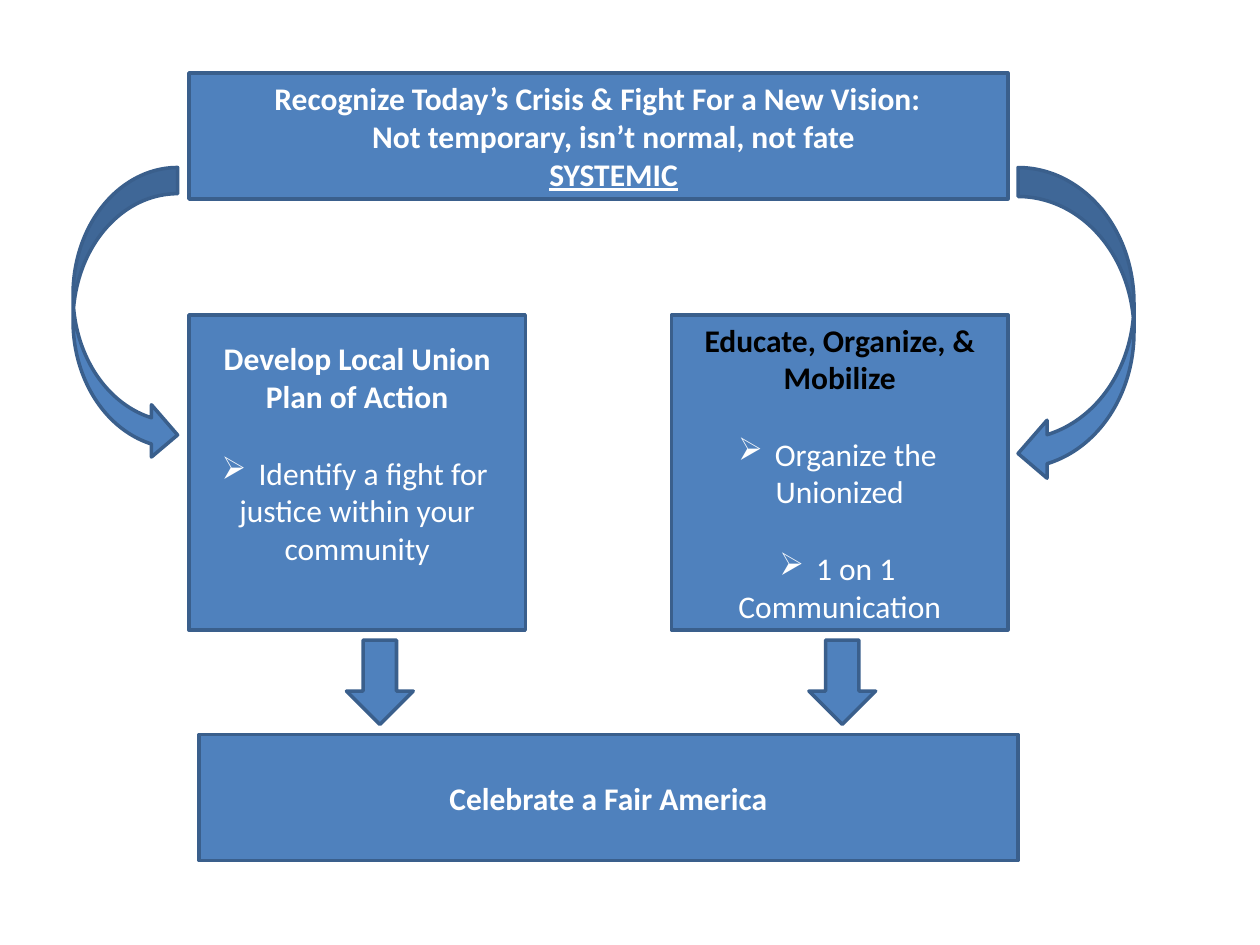
from lxml import etree
from pptx import Presentation
from pptx.dml.color import RGBColor
from pptx.enum.shapes import MSO_SHAPE
from pptx.enum.text import MSO_ANCHOR, PP_ALIGN
from pptx.oxml.ns import qn
from pptx.util import Inches, Pt

RECTANGLE = MSO_SHAPE.RECTANGLE
CURVED_RIGHT = MSO_SHAPE.CURVED_RIGHT_ARROW
CURVED_LEFT = MSO_SHAPE.CURVED_LEFT_ARROW
DOWN = MSO_SHAPE.DOWN_ARROW
LEFT, CENTER = PP_ALIGN.LEFT, PP_ALIGN.CENTER
MIDDLE, TOP = MSO_ANCHOR.MIDDLE, MSO_ANCHOR.TOP

COLORS = {"fill": "4F81BD", "line": "3A5F8C", "white": "FFFFFF", "black": "000000"}
LINE_GAP = Pt(22)

presentation = Presentation()
presentation.slide_width = Inches(10)
presentation.slide_height = Inches(7.5)
slide = presentation.slides.add_slide(presentation.slide_layouts[6])


def add_blue_shape(kind, left, top, width, height):
    shape = slide.shapes.add_shape(
        kind, Inches(left), Inches(top), Inches(width), Inches(height))
    shape.shadow.inherit = False
    shape.fill.solid()
    shape.fill.fore_color.rgb = RGBColor.from_string(COLORS["fill"])
    shape.line.color.rgb = RGBColor.from_string(COLORS["line"])
    shape.line.width = Pt(2)
    return shape


def write_lines(shape, lines, anchor=MIDDLE, color="white", alignment=CENTER):
    """Write a bold heading; lines that start with a space become bulleted items."""
    frame = shape.text_frame
    frame.word_wrap = True
    frame.vertical_anchor = anchor
    frame.text = "\n".join(lines)
    for index, paragraph in enumerate(frame.paragraphs):
        is_item = paragraph.text.startswith(" ")
        paragraph.alignment = CENTER if index else alignment
        if is_item:
            paragraph.space_before = LINE_GAP
            bullet = etree.SubElement(paragraph._p.get_or_add_pPr(), qn("a:buChar"))
            bullet.set("char", "➢")
        font = paragraph.runs[0].font
        font.name = "Calibri"
        font.size = Pt(18)
        font.bold = not is_item
        font.color.rgb = RGBColor.from_string(COLORS["white" if is_item else color])


# Crisis banner and its heading
add_blue_shape(RECTANGLE, 1.5, 0.58, 6.5, 1)
heading = slide.shapes.add_textbox(Inches(2.08), Inches(0.58), Inches(5.58), Inches(1.02))
write_lines(heading, [
    "Recognize Today’s Crisis & Fight For a New Vision:",
    "Not temporary, isn’t normal, not fate",
    "SYSTEMIC",
], anchor=TOP, alignment=LEFT)
heading.text_frame.paragraphs[-1].runs[0].font.underline = True

# Two action boxes
plan_box = add_blue_shape(RECTANGLE, 1.5, 2.5, 2.67, 2.5)
write_lines(plan_box, [
    "Develop Local Union Plan of Action",
    " Identify a fight for justice within your community",
])
plan_box.text_frame.margin_bottom = Inches(0.05) + LINE_GAP

organize_box = add_blue_shape(RECTANGLE, 5.33, 2.5, 2.67, 2.5)
write_lines(organize_box, [
    "Educate, Organize, & Mobilize",
    " Organize the Unionized",
    " 1 on 1 Communication",
], color="black")

# Outcome banner
outcome_box = add_blue_shape(RECTANGLE, 1.58, 5.83, 6.5, 1)
write_lines(outcome_box, ["Celebrate a Fair America"])

# Arrows from the crisis to the actions, and from the actions to the outcome
add_blue_shape(CURVED_RIGHT, 0.58, 1.33, 0.83, 2.33)
add_blue_shape(CURVED_LEFT, 8.08, 1.33, 0.92, 2.5)
for left in (2.75, 6.42):
    add_blue_shape(DOWN, left, 5.08, 0.53, 0.67)

presentation.save("out.pptx")
